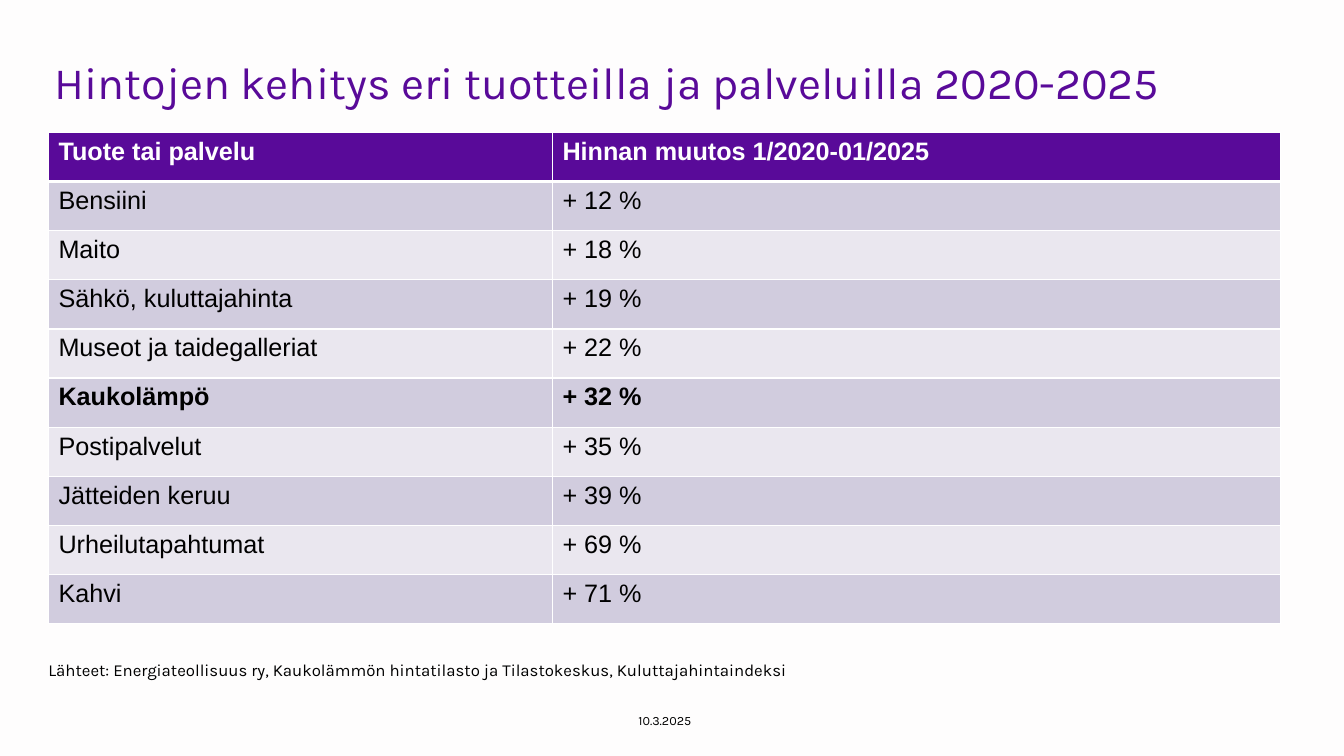
from lxml import etree
from pptx import Presentation
from pptx.dml.color import RGBColor
from pptx.enum.text import MSO_ANCHOR, PP_ALIGN
from pptx.oxml.ns import qn
from pptx.util import Pt

TITLE = "Hintojen kehitys eri tuotteilla ja palveluilla 2020-2025"
ROWS = [
    ("Tuote tai palvelu", "Hinnan muutos 1/2020-01/2025"),
    ("Bensiini", "+ 12 %"),
    ("Maito", "+ 18 %"),
    ("Sähkö, kuluttajahinta", "+ 19 %"),
    ("Museot ja taidegalleriat", "+ 22 %"),
    ("Kaukolämpö", "+ 32 %"),
    ("Postipalvelut", "+ 35 %"),
    ("Jätteiden keruu", "+ 39 %"),
    ("Urheilutapahtumat", "+ 69 %"),
    ("Kahvi", "+ 71 %"),
]
HIGHLIGHT = "Kaukolämpö"
SOURCES = ("Lähteet: Energiateollisuus ry, Kaukolämmön hintatilasto "
           "ja Tilastokeskus, Kuluttajahintaindeksi")
DATE = "10.3.2025"

BACKGROUND = RGBColor(0xFE, 0xFD, 0xFD)
PURPLE = RGBColor(0x59, 0x0A, 0x99)
DARK_BAND = RGBColor(0xD1, 0xCC, 0xDE)
LIGHT_BAND = RGBColor(0xEA, 0xE7, 0xEF)
WHITE = RGBColor(0xFF, 0xFF, 0xFF)
BLACK = RGBColor(0, 0, 0)
TOP, MIDDLE = MSO_ANCHOR.TOP, MSO_ANCHOR.MIDDLE
LEFT, CENTER = PP_ALIGN.LEFT, PP_ALIGN.CENTER

TABLE_LEFT, TABLE_TOP = 34.6, 94.6
COL_WIDTHS = (360, 520)
ROW_HEIGHT = 35.1


def write(sp, text, size, color, right=7.2, anchor=TOP, align=LEFT, spacing=0.9):
    tf = sp.text_frame
    tf.word_wrap = True
    tf.vertical_anchor = anchor
    tf.margin_left, tf.margin_right = 0, Pt(right)
    tf.margin_top = tf.margin_bottom = Pt(3.6)
    tf.text = text
    p = tf.paragraphs[0]
    p.alignment = align
    p.line_spacing = spacing
    style(p.runs[0], "Karla", size, color)


def style(r, name, size, color, bold=False):
    r.font.name = name
    r.font.size = Pt(size)
    r.font.color.rgb = color
    r.font.bold = bold


def set_borders(cell, bottom):
    props = cell._tc.get_or_add_tcPr()
    widths = {"a:lnL": 1, "a:lnR": 1, "a:lnT": 1, "a:lnB": bottom}
    for i, (tag, width) in enumerate(widths.items()):
        ln = etree.Element(qn(tag), w=str(Pt(width)))
        fill = etree.SubElement(ln, qn("a:solidFill"))
        etree.SubElement(fill, qn("a:srgbClr"), val=str(WHITE))
        props.insert(i, ln)


prs = Presentation()
prs.slide_width, prs.slide_height = Pt(960), Pt(540)
slide = prs.slides.add_slide(prs.slide_layouts[5])
slide.background.fill.solid()
slide.background.fill.fore_color.rgb = BACKGROUND

title = slide.shapes.title
title.left, title.top, title.width, title.height = Pt(38.9), Pt(39.6), Pt(880.6), Pt(79.2)
write(title, TITLE, 32, PURPLE)

table = slide.shapes.add_table(
    len(ROWS), len(COL_WIDTHS), Pt(TABLE_LEFT), Pt(TABLE_TOP),
    Pt(sum(COL_WIDTHS)), Pt(ROW_HEIGHT * len(ROWS))).table
for col, width in zip(table.columns, COL_WIDTHS):
    col.width = Pt(width)
for i, row in enumerate(ROWS):
    table.rows[i].height = Pt(ROW_HEIGHT)
    header = i == 0
    band = PURPLE if header else DARK_BAND if i % 2 else LIGHT_BAND
    for j, text in enumerate(row):
        cell = table.cell(i, j)
        cell.text = text
        cell.fill.solid()
        cell.fill.fore_color.rgb = band
        set_borders(cell, 3 if header else 1)
        style(cell.text_frame.paragraphs[0].runs[0], "Arial", 18,
              WHITE if header else BLACK, header or row[0] == HIGHLIGHT)

date = slide.shapes.add_textbox(Pt(434.9), Pt(500.4), Pt(79.9), Pt(28.8))
write(date, DATE, 9, BLACK, right=0, anchor=MIDDLE, align=CENTER, spacing=1.0)

sources = slide.shapes.add_textbox(Pt(TABLE_LEFT), Pt(469.4), Pt(881.3), Pt(16.6))
write(sources, SOURCES, 12, BLACK)

prs.save("out.pptx")
